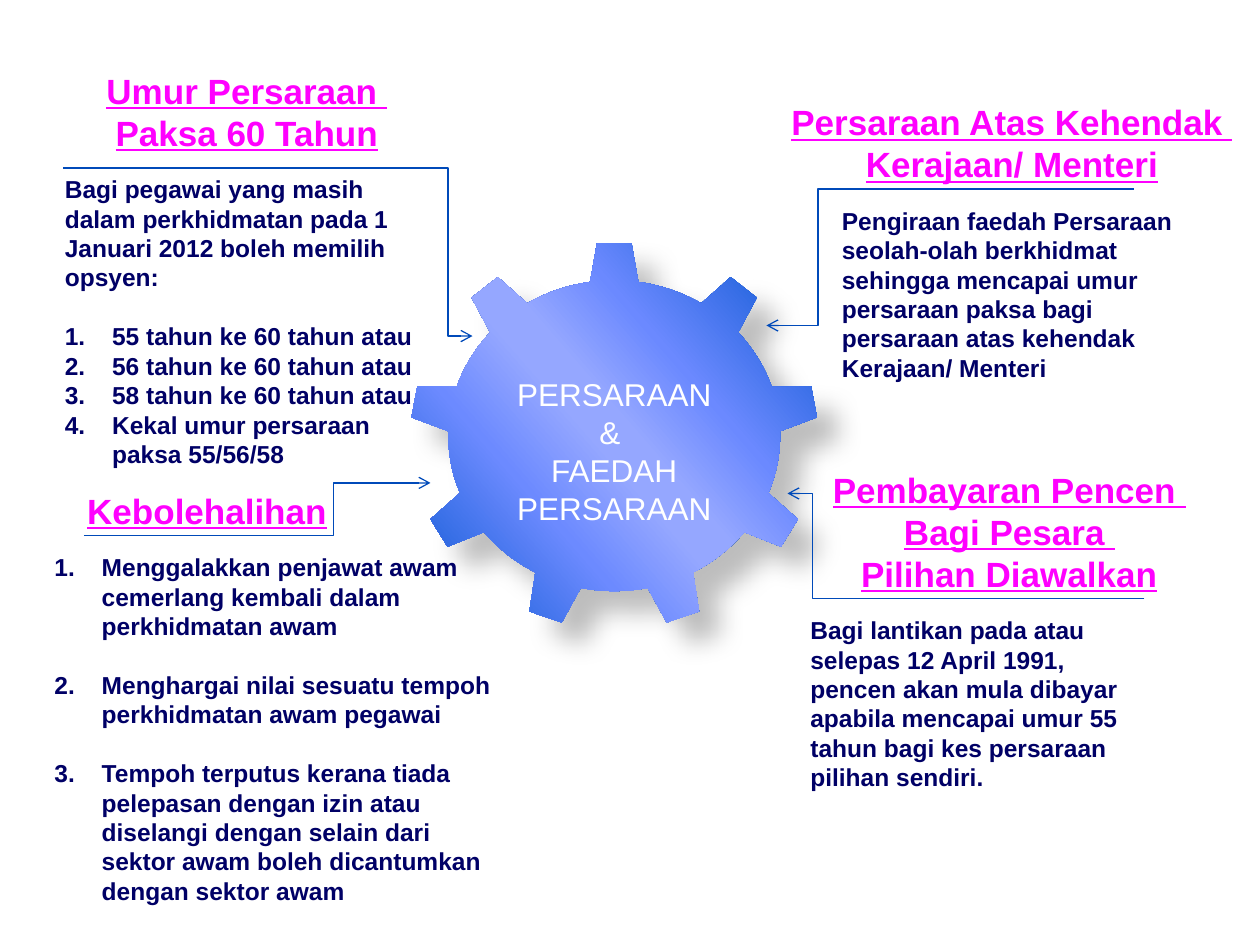
"""Build a slide on retirement and its benefits around a central gear."""
from lxml import etree
from pptx import Presentation
from pptx.dml.color import RGBColor
from pptx.enum.shapes import MSO_CONNECTOR as CONN, MSO_SHAPE as SHAPE
from pptx.enum.text import MSO_AUTO_SIZE as AUTO, PP_ALIGN as ALIGN
from pptx.oxml import parse_xml
from pptx.oxml.ns import nsdecls, qn
from pptx.util import Pt

NS = nsdecls("a")
HEAD = {"size": Pt(20), "bold": True, "underline": True, "color": "FF00FF"}
BODY = {"size": Pt(14), "bold": True, "color": "000066"}
HUB = {"size": Pt(18), "color": "FFFFFF"}


def rgb(value):
    return RGBColor.from_string(value)


def write(tf, lines, fmt, align, numbered=(), gaps=()):
    for i, line in enumerate(lines):
        p = tf.paragraphs[0] if i == 0 else tf.add_paragraph()
        p.alignment = align
        if i in gaps:
            p.space_before = Pt(16.8)
        if i in numbered:
            pPr = p._p.get_or_add_pPr()
            pPr.set("marL", str(Pt(27)))
            pPr.set("indent", str(-Pt(27)))
            pPr.append(parse_xml(f'<a:buFont {NS} typeface="+mj-lt"/>'))
            pPr.append(parse_xml(f'<a:buAutoNum {NS} type="arabicPeriod"/>'))
        r = p.add_run()
        r.text = line
        r.font.name = "Arial"
        for key, value in fmt.items():
            if key == "color":
                r.font.color.rgb = rgb(value)
            else:
                setattr(r.font, key, value)


prs = Presentation()
prs.slide_width, prs.slide_height = Pt(720), Pt(540)
s = prs.slides.add_slide(prs.slide_layouts[6])

gear = s.shapes.add_shape(SHAPE.GEAR_9, Pt(234), Pt(138), Pt(234), Pt(222))
gear.line.fill.background()
stops = [(0, "0052CC"), (33, "6B89FF"), (47, "95A7FF"),
         (53, "95A7FF"), (68, "6C8AFF"), (100, "0052CC")]
gs = "".join(f'<a:gs pos="{pos * 1000}"><a:srgbClr val="{c}"/></a:gs>' for pos, c in stops)
spPr = gear._element.spPr
spPr.find(qn("a:prstGeom")).addnext(parse_xml(
    f'<a:gradFill {NS} rotWithShape="1"><a:gsLst>{gs}</a:gsLst>'
    f'<a:lin ang="{139 * 60000}" scaled="0"/></a:gradFill>'))
spPr.append(parse_xml(
    f'<a:effectLst {NS}><a:outerShdw blurRad="{Pt(15)}" dist="{Pt(18)}" dir="{45 * 60000}" '
    'algn="tl" rotWithShape="0"><a:srgbClr val="000000"><a:alpha val="26000"/></a:srgbClr>'
    '</a:outerShdw></a:effectLst>'))
tf = gear.text_frame
tf.word_wrap = True
tf.margin_top = Pt(25)
write(tf, ["PERSARAAN & ", "FAEDAH PERSARAAN"], HUB, ALIGN.CENTER)

connectors = [
    (648, 108, 438, 186, 0.86),
    (654, 342, 450, 282, 0.93),
    (36, 96, 270, 192, 0.94),
    (48, 306, 246, 276, 0.72),
]
for x1, y1, x2, y2, bend in connectors:
    c = s.shapes.add_connector(CONN.ELBOW, Pt(x1), Pt(y1), Pt(x2), Pt(y2))
    c.line.color.rgb = rgb("004AB9")
    c.line.width = Pt(0.75)
    spPr = c._element.spPr
    av = spPr.find(qn("a:prstGeom")).get_or_add_avLst()
    etree.SubElement(av, qn("a:gd"), name="adj1", fmla=f"val {round(bend * 100000)}")
    etree.SubElement(c.line._get_or_add_ln(), qn("a:tailEnd"), type="arrow")
    etree.SubElement(spPr, qn("a:effectLst"))

bodies = [
    (474, 114, 210, 108.7, (), (), [
        "Pengiraan faedah Persaraan seolah-olah berkhidmat sehingga mencapai umur "
        "persaraan paksa bagi persaraan atas kehendak Kerajaan/ Menteri"]),
    (456, 348, 210, 108.7, (), (), [
        "Bagi lantikan pada atau selepas 12 April 1991, pencen akan mula dibayar apabila "
        "mencapai umur 55 tahun bagi kes persaraan pilihan sendiri."]),
    (30, 96, 216, 177, range(1, 5), (1,), [
        "Bagi pegawai yang masih dalam perkhidmatan pada 1 Januari 2012 boleh memilih opsyen:",
        "55 tahun ke 60 tahun atau",
        "56 tahun ke 60 tahun atau",
        "58 tahun ke 60 tahun atau",
        "Kekal umur persaraan paksa 55/56/58"]),
    (24, 312, 264, 211, range(3), (1, 2), [
        "Menggalakkan penjawat awam cemerlang kembali dalam perkhidmatan awam",
        "Menghargai nilai sesuatu tempoh perkhidmatan awam pegawai",
        "Tempoh terputus kerana tiada pelepasan dengan izin atau diselangi dengan selain "
        "dari sektor awam boleh dicantumkan dengan sektor awam"]),
]
for x, y, w, h, numbered, gaps, lines in bodies:
    tf = s.shapes.add_textbox(Pt(x), Pt(y), Pt(w), Pt(h)).text_frame
    tf.word_wrap = True
    tf.auto_size = AUTO.SHAPE_TO_FIT_TEXT
    write(tf, lines, BODY, ALIGN.LEFT, numbered, gaps)

headings = [
    (24, 36, 234, 55.4, True, ["Umur Persaraan ", "Paksa 60 Tahun"]),
    (444, 54, 268.6, 55.4, False, ["Persaraan Atas Kehendak ", "Kerajaan/ Menteri"]),
    (42, 276, 152.6, 31.7, False, ["Kebolehalihan"]),
    (468, 264, 217.4, 79.9, False, ["Pembayaran Pencen ", "Bagi Pesara ", "Pilihan Diawalkan"]),
]
for x, y, w, h, wrap, lines in headings:
    tf = s.shapes.add_textbox(Pt(x), Pt(y), Pt(w), Pt(h)).text_frame
    tf.word_wrap = wrap
    tf.auto_size = AUTO.SHAPE_TO_FIT_TEXT
    write(tf, lines, HEAD, ALIGN.CENTER)

prs.save("out.pptx")
